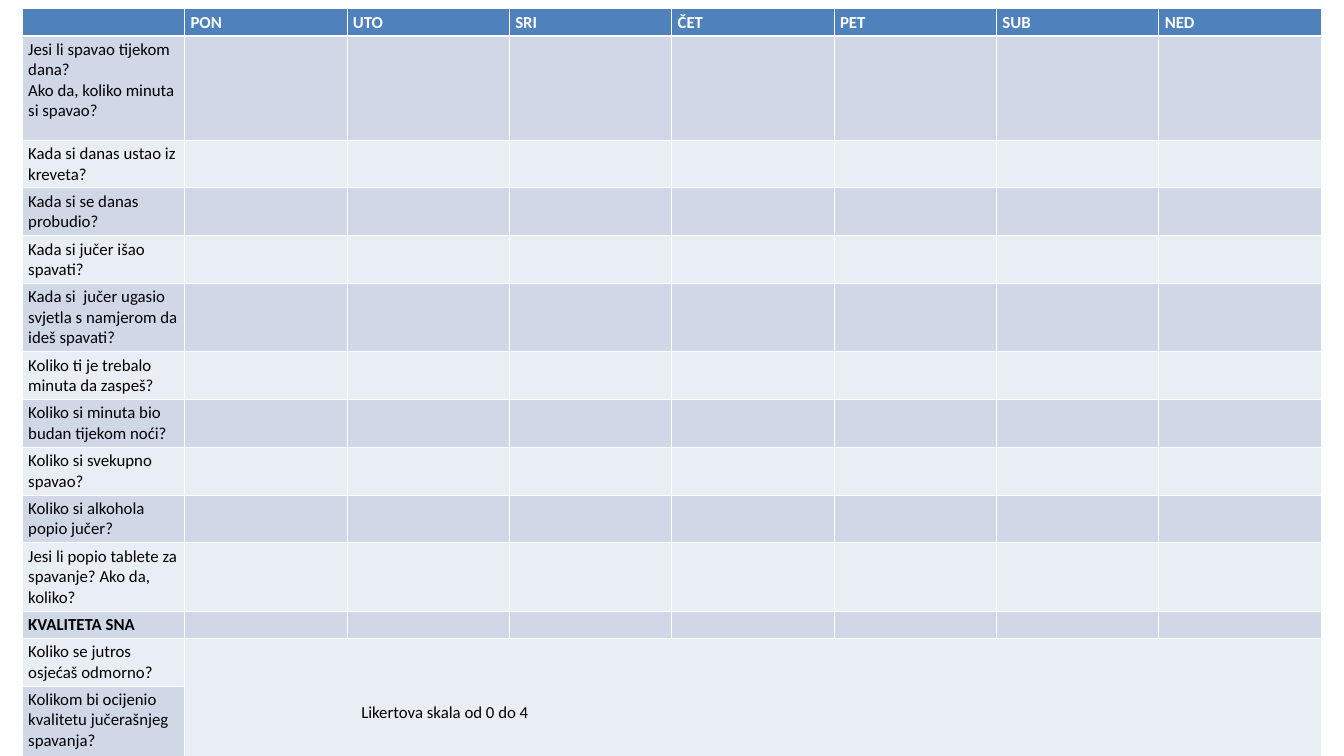
from dataclasses import dataclass

from lxml.etree import SubElement
from pptx import Presentation
from pptx.dml.color import RGBColor
from pptx.enum.text import MSO_ANCHOR
from pptx.oxml.ns import qn
from pptx.util import Inches, Pt


@dataclass(frozen=True)
class Theme:
    font: str = "Calibri"
    size: int = 18
    header: str = "4F81BD"
    bands: tuple = ("E9EDF4", "D0D8E8")
    light: str = "FFFFFF"
    dark: str = "000000"
    rule: int = 1
    header_rule: int = 3


theme = Theme()


def write(cell, text, color=theme.dark, bold=False):
    tf = cell.text_frame
    tf.word_wrap = True
    for i, line in enumerate(text.split("\n")):
        p = tf.add_paragraph() if i else tf.paragraphs[0]
        r = p.add_run()
        r.text = line
        r.font.name = theme.font
        r.font.size = Pt(theme.size)
        r.font.bold = bold
        r.font.color.rgb = RGBColor.from_string(color)


def style(cell, fill, top=theme.rule, bottom=theme.rule):
    tc_pr = cell._tc.get_or_add_tcPr()
    widths = {"a:lnL": theme.rule, "a:lnR": theme.rule, "a:lnT": top, "a:lnB": bottom}
    for tag, width in widths.items():
        ln = SubElement(tc_pr, qn(tag), w=str(Pt(width)))
        SubElement(SubElement(ln, qn("a:solidFill")), qn("a:srgbClr"), val=theme.light)
    cell.fill.solid()
    cell.fill.fore_color.rgb = RGBColor.from_string(fill)
    cell.margin_left = cell.margin_right = Inches(0.09)
    cell.margin_top = cell.margin_bottom = Inches(0.05)


days = ["PON", "UTO", "SRI", "ČET", "PET", "SUB", "NED"]
section = "KVALITETA SNA"
questions = [
    ("Jesi li spavao tijekom dana?\nAko da, koliko minuta si spavao?", 1.55),
    ("Kada si danas ustao iz kreveta?", 0.68),
    ("Kada si se danas probudio?", 0.68),
    ("Kada si jučer išao spavati?", 0.68),
    ("Kada si  jučer ugasio svjetla s namjerom da ideš spavati?", 0.97),
    ("Koliko ti je trebalo minuta da zaspeš?", 0.68),
    ("Koliko si minuta bio budan tijekom noći?", 0.68),
    ("Koliko si svekupno spavao?", 0.68),
    ("Koliko si alkohola popio jučer?", 0.68),
    ("Jesi li popio tablete za spavanje? Ako da, koliko?", 0.97),
    (section, 0.39),
    ("Koliko se jutros osjećaš odmorno?", 0.68),
    ("Kolikom bi ocijenio kvalitetu jučerašnjeg spavanja?", 1.07),
]

prs = Presentation()
prs.slide_width = Inches(20)
prs.slide_height = Inches(11.25)
s = prs.slides.add_slide(prs.slide_layouts[6])

diary = s.shapes.add_table(
    len(questions) + 1, len(days) + 1,
    Inches(0.33), Inches(0.13), Inches(19.33), Inches(11.02),
).table
diary.first_row = True
diary.horz_banding = False

diary.rows[0].height = Inches(0.39)
for cell in diary.rows[0].cells:
    style(cell, theme.header, bottom=theme.header_rule)
for col, day in enumerate(days, 1):
    write(diary.cell(0, col), day, color=theme.light, bold=True)

for row, (question, height) in enumerate(questions, 1):
    diary.rows[row].height = Inches(height)
    for cell in diary.rows[row].cells:
        style(cell, theme.bands[row % 2], top=theme.header_rule if row == 1 else theme.rule)
    write(diary.cell(row, 0), question, bold=question == section)

scale = diary.cell(len(questions) - 1, 1)
scale.merge(diary.cell(len(questions), len(days)))
scale.vertical_anchor = MSO_ANCHOR.MIDDLE
scale.margin_left = Inches(2.63)
scale.margin_top = Inches(0.5)
write(scale, "Likertova skala od 0 do 4")

prs.save("out.pptx")
